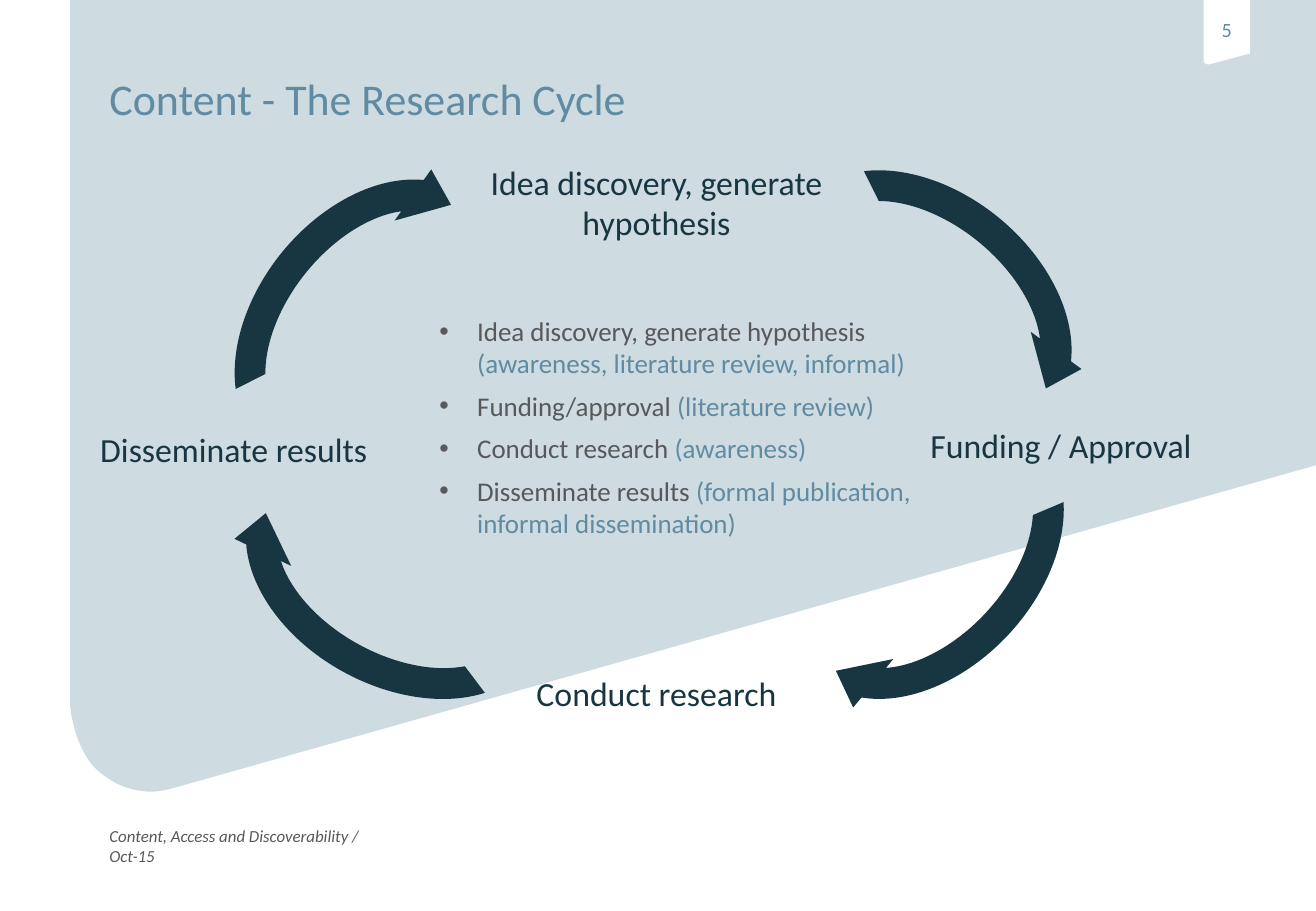
import lxml.etree
import pptx
import pptx.dml.color
import pptx.enum.shapes
import pptx.enum.text
import pptx.oxml.ns
import pptx.util

Cm = pptx.util.Cm
Align = pptx.enum.text.PP_ALIGN

FONT = "Calibri"
NAVY = "183642"
STEEL = "608BA3"
MIST = "CEDBE0"
GREY = "58595B"
WHITE = "FFFFFF"

ARROW_SIZE = (7.37, 5.26)
ARROW_ADJUSTMENTS = (0.125, 9.453, 204.577, 122.487, 0.125)
ARROWS = [
    (3.99, 4.11, 308.9),
    (4.6, 9.4, 208.8),
    (15.75, 3.71, 39.5),
    (15.72, 9.07, 132.9),
]
LABELS = [
    ("Idea discovery, generate hypothesis", 9.5, 3.18, 2.11),
    ("Funding / Approval", 17.96, 8.69, 1.27),
    ("Conduct research", 9.5, 13.87, 1.27),
    ("Disseminate results", 0.66, 8.76, 1.27),
]
STAGES = [
    ("Idea discovery, generate hypothesis ", "(awareness, literature review, informal)"),
    ("Funding/approval ", "(literature review)"),
    ("Conduct research ", "(awareness)"),
    ("Disseminate results ", "(formal publication, informal dissemination)"),
]


def color(value):
    return pptx.dml.color.RGBColor.from_string(value)


def paint(shape, fill):
    shape.shadow.inherit = False
    shape.fill.solid()
    shape.fill.fore_color.rgb = color(fill)
    shape.line.fill.background()


def add_run(paragraph, text, size, text_color, italic=False):
    run = paragraph.add_run()
    run.text = text
    run.font.name = FONT
    run.font.size = pptx.util.Pt(size)
    run.font.color.rgb = color(text_color)
    run.font.italic = italic


def set_insets(frame, inset):
    frame.margin_left = frame.margin_right = Cm(inset)
    frame.margin_top = frame.margin_bottom = Cm(inset)


def add_text_frame(slide, left, top, width, height, inset=0, wrap=True):
    box = slide.shapes.add_textbox(Cm(left), Cm(top), Cm(width), Cm(height))
    box.text_frame.word_wrap = wrap
    set_insets(box.text_frame, inset)
    return box.text_frame


def curve_points(start, control_one, control_two, end, steps=12):
    for step in range(1, steps + 1):
        t = step / steps
        weights = ((1 - t) ** 3, 3 * t * (1 - t) ** 2, 3 * t * t * (1 - t), t ** 3)
        anchors = (start, control_one, control_two, end)
        yield tuple(
            sum(weight * anchor[axis] for weight, anchor in zip(weights, anchors))
            for axis in (0, 1)
        )


def add_outline(slide, corners, curves, fill):
    points = list(corners)
    for curve in curves:
        points.extend(curve_points(points[-1], *curve))
    points = [(Cm(x), Cm(y)) for x, y in points]
    builder = slide.shapes.build_freeform(*points[0])
    builder.add_line_segments(points[1:], close=True)
    shape = builder.convert_to_shape()
    paint(shape, fill)
    return shape


def add_panel(slide):
    corners = [(1.47, 0), (27.52, 0), (27.52, 9.73), (3.63, 16.48)]
    curves = [
        ((3.51, 16.51), (3.23, 16.59), (2.97, 16.54)),
        ((2.72, 16.51), (2.41, 16.43), (2.03, 16.1)),
        ((1.65, 15.75), (1.5, 15.09), (1.47, 14.78)),
    ]
    add_outline(slide, corners, curves, MIST)


def add_page_tab(slide, number):
    corners = [(25.17, 0), (26.14, 0), (26.14, 1.12), (25.27, 1.35)]
    curves = [((25.22, 1.35), (25.17, 1.3), (25.17, 1.27))]
    frame = add_outline(slide, corners, curves, WHITE).text_frame
    set_insets(frame, 0)
    frame.margin_bottom = Cm(0.1)
    frame.word_wrap = False
    frame.vertical_anchor = pptx.enum.text.MSO_ANCHOR.MIDDLE
    paragraph = frame.paragraphs[0]
    paragraph.alignment = Align.CENTER
    add_run(paragraph, number, 12, STEEL)


def add_bullet(paragraph):
    properties = paragraph._p.get_or_add_pPr()
    properties.set("marL", str(Cm(0.79)))
    properties.set("indent", str(-Cm(0.79)))
    qn = pptx.oxml.ns.qn
    bullet_color = lxml.etree.SubElement(properties, qn("a:buClr"))
    lxml.etree.SubElement(bullet_color, qn("a:srgbClr"), val=GREY)
    lxml.etree.SubElement(properties, qn("a:buFont"), typeface="Arial")
    lxml.etree.SubElement(properties, qn("a:buChar"), char="•")


def add_stages(slide):
    frame = add_text_frame(slide, 9.19, 6.58, 9.9, 4.75)
    for index, (stage, detail) in enumerate(STAGES):
        paragraph = frame.add_paragraph() if index else frame.paragraphs[0]
        add_bullet(paragraph)
        paragraph.space_after = pptx.util.Pt(6)
        add_run(paragraph, stage, 16, GREY)
        add_run(paragraph, detail, 16, STEEL)


def add_cycle_arrow(slide, left, top, rotation):
    width, height = ARROW_SIZE
    arrow = slide.shapes.add_shape(
        pptx.enum.shapes.MSO_SHAPE.CIRCULAR_ARROW,
        Cm(left), Cm(top), Cm(width), Cm(height),
    )
    arrow.rotation = rotation
    for index, value in enumerate(ARROW_ADJUSTMENTS):
        arrow.adjustments[index] = value
    paint(arrow, NAVY)


def add_label(slide, text, left, top, height):
    frame = add_text_frame(slide, left, top, 8.46, height, inset=0.2)
    paragraph = frame.paragraphs[0]
    paragraph.alignment = Align.CENTER
    add_run(paragraph, text, 20, NAVY)


def main():
    presentation = pptx.Presentation()
    presentation.slide_width = Cm(27.52)
    presentation.slide_height = Cm(19.05)
    slide = presentation.slides.add_slide(presentation.slide_layouts[6])

    footer = add_text_frame(slide, 2.29, 17.27, 5.82, 0.43, wrap=False)
    add_run(footer.paragraphs[0], "Content, Access and Discoverability / Oct-15", 10, GREY, italic=True)
    add_panel(slide)
    add_page_tab(slide, "5")
    add_stages(slide)
    title = add_text_frame(slide, 2.29, 1.5, 22.89, 1.04)
    add_run(title.paragraphs[0], "Content - The Research Cycle", 26, STEEL)
    for arrow in ARROWS:
        add_cycle_arrow(slide, *arrow)
    for label in LABELS:
        add_label(slide, *label)

    presentation.save("out.pptx")


if __name__ == "__main__":
    main()
